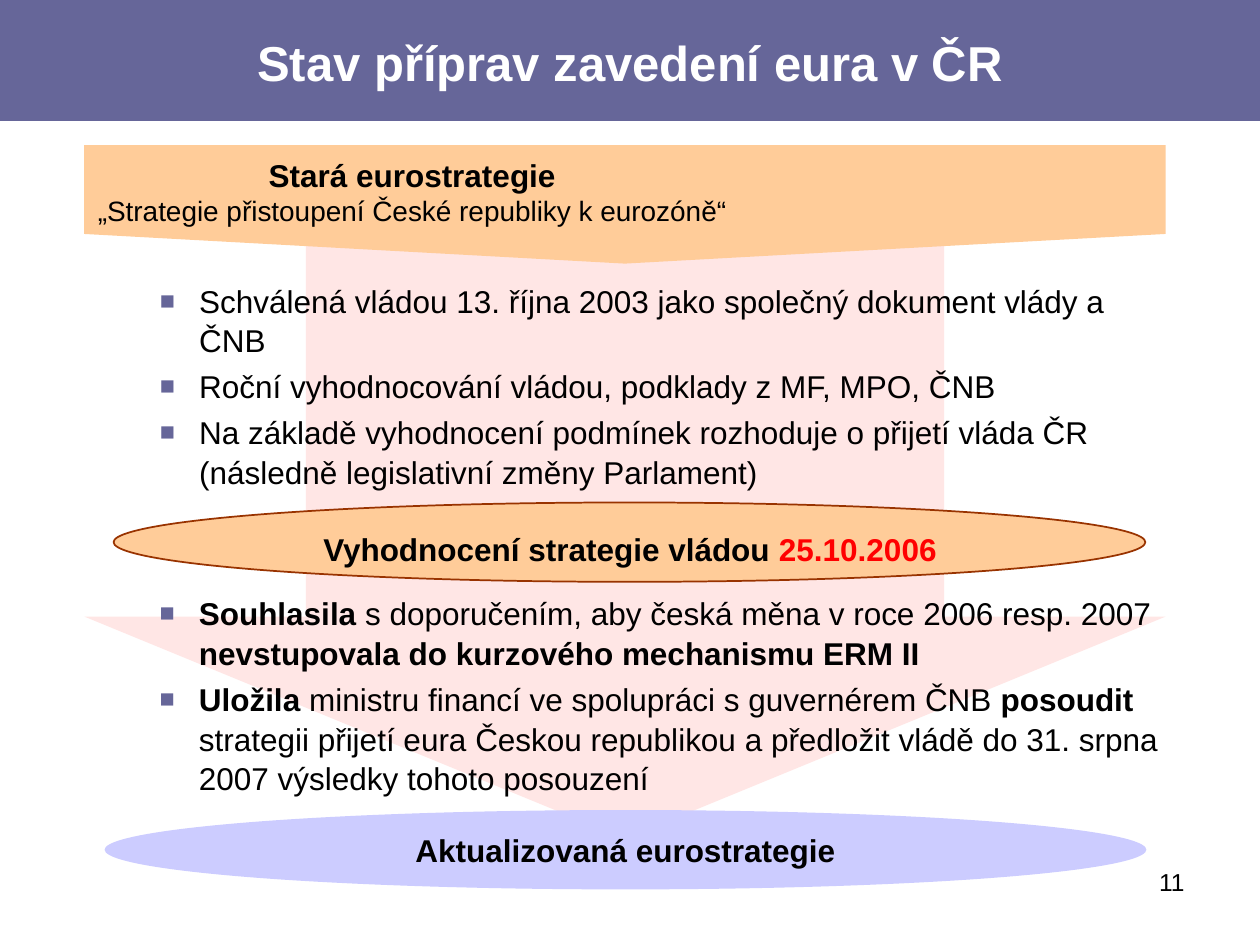
import pptx
import pptx.util
import pptx.dml.color
import pptx.enum.shapes
import pptx.enum.text
import lxml.etree

Cm, Pt = pptx.util.Cm, pptx.util.Pt
Kind = pptx.enum.shapes.MSO_SHAPE
Side = pptx.enum.text.PP_ALIGN
Mid = pptx.enum.text.MSO_ANCHOR.MIDDLE
NS = "{http://schemas.openxmlformats.org/drawingml/2006/main}"


def hue(code):
    return pptx.dml.color.RGBColor.from_string(code)


def write(para, parts, size=18, align=Side.CENTER):
    para.text = "".join(text for text, bold, code in parts[:1])
    for text, bold, code in parts[1:]:
        para.add_run().text = text
    para.alignment = align
    for run, (text, bold, code) in zip(para.runs, parts):
        run.font.name = "Arial"
        run.font.size = Pt(size)
        run.font.bold = bold
        run.font.color.rgb = hue(code)


deck = pptx.Presentation()
deck.slide_width, deck.slide_height = Cm(25.4), Cm(19.05)
slide = deck.slides.add_slide(deck.slide_layouts[1])
shapes = slide.shapes
title, body = slide.placeholders

forms = {}
for name, kind, box, fill, line, wide in [
    ("arrow", Kind.DOWN_ARROW, (1.7, 4.11, 21.8, 12.8), "FFE6E5", None, 0),
    ("band", Kind.RECTANGLE, (0, -0.08, 25.4, 2.51), "666699", "666699", 0.75),
    ("banner", Kind.PENTAGON, (11.4, -6.78, 2.39, 21.8), "FFCC99", None, 0),
    ("review", Kind.OVAL, (2.29, 10.13, 20.8, 1.6), "FFCC99", "993300", 1),
    ("update", Kind.OVAL, (2.11, 16.33, 21, 1.6), "CCCCFF", None, 0),
]:
    form = shapes.add_shape(kind, *map(Cm, box))
    form.shadow.inherit = False
    form.fill.solid()
    form.fill.fore_color.rgb = hue(fill)
    if line:
        form.line.color.rgb = hue(line)
        form.line.width = Pt(wide)
    else:
        form.line.fill.background()
    forms[name] = form
forms["arrow"].adjustments[0] = 0.59
forms["arrow"].adjustments[1] = 0.35
forms["banner"].adjustments[0] = 0.25
forms["banner"].rotation = 90

for holder in (title, body):
    holder.element.getparent().append(holder.element)
label = shapes.add_textbox(0, 0, 0, 0)
steps = shapes.add_textbox(0, 0, 0, 0)
page = shapes.add_textbox(0, 0, 0, 0)
for form, box in [
    (title, (0.5, 0, 24.4, 2.51)),
    (body, (1.7, 5.64, 21.9, 5)),
    (label, (1.46, 3.15, 13.7, 1.6)),
    (steps, (1.7, 10.64, 22, 5.7)),
    (page, (18.21, 17.35, 5.92, 1.32)),
]:
    form.left, form.top, form.width, form.height = map(Cm, box)
    frame = form.text_frame
    frame.word_wrap = True
    frame.auto_size = pptx.enum.text.MSO_AUTO_SIZE.NONE
    if form in (body, label, steps):
        frame.margin_top = frame.margin_bottom = 0

title.text_frame.vertical_anchor = Mid
write(title.text_frame.paragraphs[0],
      [("Stav příprav zavedení eura v ČR", True, "FFFFFF")], 28)
write(label.text_frame.paragraphs[0], [("Stará eurostrategie", True, "000000")])
write(label.text_frame.add_paragraph(),
      [("„Strategie přistoupení České republiky k eurozóně“", False, "000000")], 16)
oval = forms["update"].text_frame
oval.vertical_anchor = Mid
write(oval.paragraphs[0], [("Aktualizovaná eurostrategie", True, "000000")])
write(page.text_frame.paragraphs[0], [("11", False, "000000")], 14, Side.RIGHT)

head = steps.text_frame.paragraphs[0]
write(head, [("Vyhodnocení strategie vládou ", True, "000000"),
             ("25.10.2006", True, "FF0000")])
head.line_spacing, head.space_before = 1.05, Pt(3.6)

old = [
    [("Schválená vládou 13. října 2003 jako společný dokument vlády a ČNB", False)],
    [("Roční vyhodnocování vládou, podklady z MF, MPO, ČNB", False)],
    [("Na základě vyhodnocení podmínek rozhoduje o přijetí vláda ČR "
      "(následně legislativní změny Parlament)", False)],
]
new = [
    [("Souhlasila ", True),
     ("s doporučením, aby česká měna v roce 2006 resp. 2007 ", False),
     ("nevstupovala do kurzového mechanismu ERM II", True)],
    [("Uložila ", True),
     ("ministru financí ve spolupráci s guvernérem ČNB ", False),
     ("posoudit", True),
     (" strategii přijetí eura Českou republikou a předložit vládě "
      "do 31. srpna 2007 výsledky tohoto posouzení", False)],
]
for form, items in ((body, old), (steps, new)):
    frame = form.text_frame
    for spot, item in enumerate(items):
        first = spot == 0
        para = frame.paragraphs[0] if first and form is body else frame.add_paragraph()
        write(para, [(text, bold, "000000") for text, bold in item], align=Side.LEFT)
        para.line_spacing = 1.05
        para.space_before = Pt(14.3 if first and form is steps else 3.6)
        para.level = 1
        props = para._p.get_or_add_pPr()
        props.set("marL", str(Cm(2.06)))
        props.set("indent", str(Cm(-0.79)))
        tint = lxml.etree.SubElement(props, NS + "buClr")
        lxml.etree.SubElement(tint, NS + "srgbClr", val="666699")
        lxml.etree.SubElement(props, NS + "buSzPct", val="80000")
        lxml.etree.SubElement(props, NS + "buFont", typeface="Arial")
        lxml.etree.SubElement(props, NS + "buChar", char="■")

deck.save("out.pptx")
